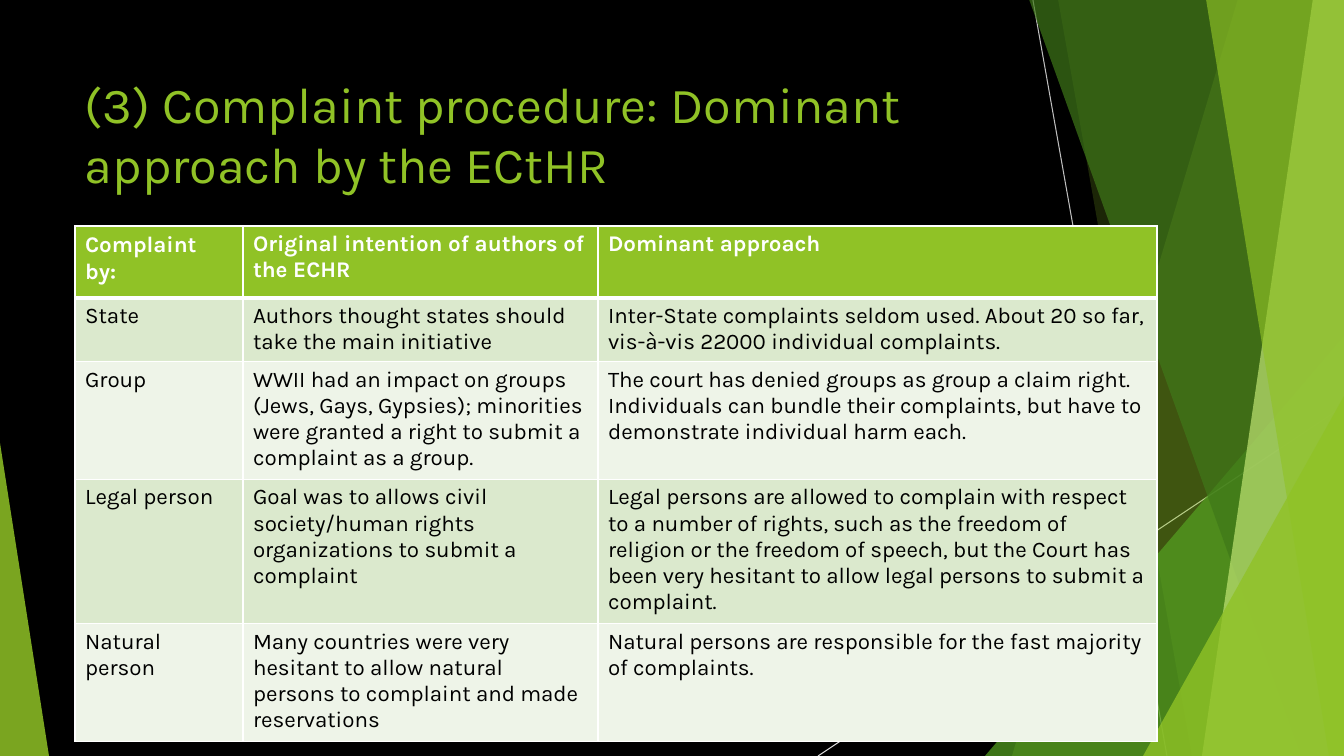
from lxml import etree
from pptx import Presentation
from pptx.dml.color import RGBColor
from pptx.enum.shapes import MSO_CONNECTOR, MSO_SHAPE
from pptx.enum.text import MSO_ANCHOR
from pptx.oxml.ns import qn
from pptx.util import Pt

STRAIGHT, TRIANGLE = MSO_CONNECTOR.STRAIGHT, MSO_SHAPE.ISOSCELES_TRIANGLE
TOP, BOTTOM = MSO_ANCHOR.TOP, MSO_ANCHOR.BOTTOM

# Content
TITLE = "(3) Complaint procedure: Dominant approach by the ECtHR"
ROWS = [
    ("Complaint by:", "Original intention of authors of the ECHR", "Dominant approach"),
    ("State",
     "Authors thought states should take the main initiative",
     "Inter-State complaints seldom used. About 20 so far, vis-à-vis 22000 "
     "individual complaints."),
    ("Group",
     "WWII had an impact on groups (Jews, Gays, Gypsies); minorities were granted "
     "a right to submit a complaint as a group.",
     "The court has denied groups as group a claim right. Individuals can bundle "
     "their complaints, but have to demonstrate individual harm each."),
    ("Legal person",
     "Goal was to allows civil society/human rights organizations to submit a complaint",
     "Legal persons are allowed to complain with respect to a number of rights, such as "
     "the freedom of religion or the freedom of speech, but the Court has been very "
     "hesitant to allow legal persons to submit a complaint."),
    ("Natural person",
     "Many countries were very hesitant to allow natural persons to complaint and made "
     "reservations",
     "Natural persons are responsible for the fast majority of complaints."),
]

# Format and layout, lengths in px
PX = 914400 / 100.8
W, H = 1344, 756
FONT = "Karla"
COLORS = {
    "black": "000000", "white": "FFFFFF", "green": "90C226", "leaf": "54A021",
    "forest": "3F7819", "lime": "C0E474", "grey": "BFBFBF", "silver": "D9D9D9",
    "band_dark": "DBE9CD", "band_light": "EEF4E8",
}
TITLE_BOX = (75, 68, 948, 145)
TABLE_AT = (75, 226)
COL_WIDTHS = (168, 355, 559)
ROW_HEIGHTS = (70, 64, 115, 141, 115)
TITLE_FONT = {"name": FONT, "size": Pt(36)}
HEAD_FONT = {"name": FONT, "size": Pt(16), "bold": True}
BODY_FONT = {"name": FONT, "size": Pt(16), "bold": False}

# Backdrop: lines (x1, y1, x2, y2, colour)
LINES = [(1033, 0, 1167, H, "grey"), (W, 406, 818, H, "silver")]
# Bands run to the right edge (top x, bottom x);
# triangles are (left, top, width, height, apex position)
FACETS = [
    ((1238, 1012), "green", 30),
    ((1058, 1192), "green", 20),
    ((985, 336, 359, 420, 1), "leaf", 72),
    ((1029, 1301), "forest", 70),
    ((1313, 1202), "lime", 70),
    ((1206, 1329), "green", 65),
    ((1143, 396, 201, 360, 1), "green", 80),
    ((0, 443, 49, 313, 0), "green", 85),
]


def emu(*lengths):
    return [round(v * PX) for v in lengths]


def rgb(name):
    return RGBColor.from_string(COLORS[name])


def write(tf, text, font, color):
    r = tf.paragraphs[0].add_run()
    r.text = text
    for key, value in font.items():
        setattr(r.font, key, value)
    r.font.color.rgb = rgb(color)


def add_line(x1, y1, x2, y2, color):
    line = slide.shapes.add_connector(STRAIGHT, *emu(x1, y1, x2, y2))
    line.line.color.rgb = rgb(color)
    line.line.width = Pt(0.75)
    etree.SubElement(line._element.spPr, qn("a:effectLst"))


def add_facet(geometry, color, opacity):
    if len(geometry) == 2:
        top_x, bottom_x = geometry
        builder = slide.shapes.build_freeform(top_x, -1, scale=PX)
        builder.add_line_segments([(W, -1), (W, H), (bottom_x, H)], close=True)
        sp = builder.convert_to_shape()
    else:
        *box, apex = geometry
        sp = slide.shapes.add_shape(TRIANGLE, *emu(*box))
        sp.adjustments[0] = apex
    sp.shadow.inherit = False
    sp.line.fill.background()
    sp.fill.solid()
    sp.fill.fore_color.rgb = rgb(color)
    clr = sp._element.spPr.find(qn("a:solidFill"))[0]
    etree.SubElement(clr, qn("a:alpha"), val=str(opacity * 1000))


def add_borders(cell, bottom_width):
    tcPr = cell._tc.get_or_add_tcPr()
    widths = {"a:lnL": 1, "a:lnR": 1, "a:lnT": 1, "a:lnB": bottom_width}
    for i, (tag, width) in enumerate(widths.items()):
        ln = etree.Element(qn(tag), w=str(Pt(width)))
        fill = etree.SubElement(ln, qn("a:solidFill"))
        etree.SubElement(fill, qn("a:srgbClr"), val=COLORS["white"])
        tcPr.insert(i, ln)


prs = Presentation()
prs.slide_width, prs.slide_height = emu(W, H)
slide = prs.slides.add_slide(prs.slide_layouts[6])
slide.background.fill.solid()
slide.background.fill.fore_color.rgb = rgb("black")

# Backdrop
for line_spec in LINES:
    add_line(*line_spec)
for facet in FACETS:
    add_facet(*facet)

# Title
tf = slide.shapes.add_textbox(*emu(*TITLE_BOX)).text_frame
tf.word_wrap = True
tf.vertical_anchor = TOP
write(tf, TITLE, TITLE_FONT, "green")

# Table
size = (sum(COL_WIDTHS), sum(ROW_HEIGHTS))
table = slide.shapes.add_table(len(ROWS), len(COL_WIDTHS), *emu(*TABLE_AT, *size)).table
for column, width in zip(table.columns, emu(*COL_WIDTHS)):
    column.width = width
for row, height in zip(table.rows, emu(*ROW_HEIGHTS)):
    row.height = height
for i, texts in enumerate(ROWS):
    is_head = i == 0
    fill = "green" if is_head else ("band_light", "band_dark")[i % 2]
    for j, text in enumerate(texts):
        cell = table.cell(i, j)
        cell.fill.solid()
        cell.fill.fore_color.rgb = rgb(fill)
        add_borders(cell, 3 if is_head else 1)
        write(cell.text_frame, text, HEAD_FONT if is_head else BODY_FONT,
              "white" if is_head else "black")

# The first heading sits level with the second line of its neighbour
corner = table.cell(0, 0)
corner.vertical_anchor = BOTTOM
corner.margin_bottom = emu(13)[0]

prs.save("out.pptx")
